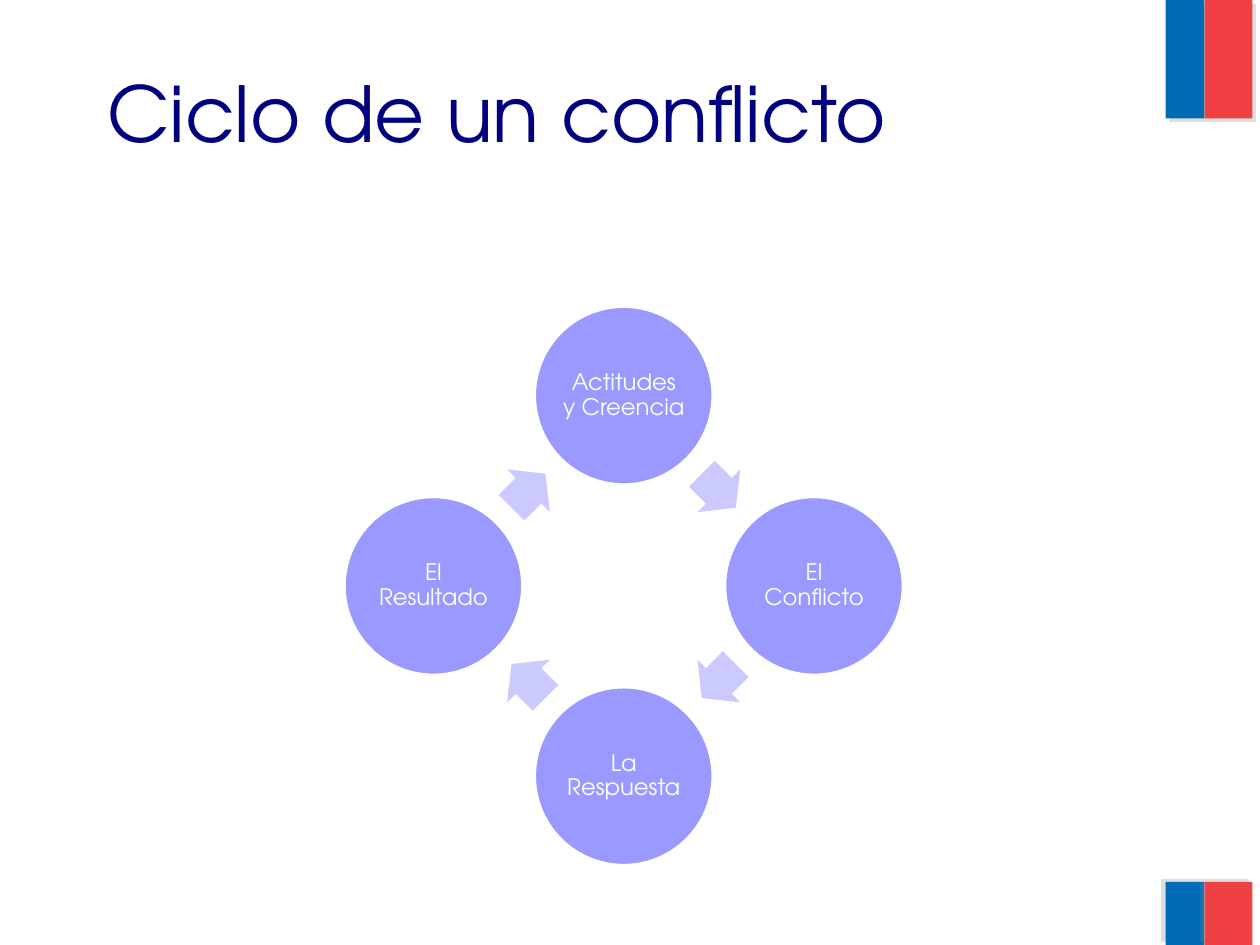
import math

from lxml import etree
from pptx import Presentation
from pptx.dml.color import RGBColor
from pptx.enum.shapes import MSO_SHAPE
from pptx.enum.text import MSO_ANCHOR, PP_ALIGN
from pptx.oxml.ns import qn
from pptx.util import Inches, Pt

RECT, OVAL, ARROW = MSO_SHAPE.RECTANGLE, MSO_SHAPE.OVAL, MSO_SHAPE.RIGHT_ARROW
TOP, MIDDLE = MSO_ANCHOR.TOP, MSO_ANCHOR.MIDDLE
LEFT, CENTER = PP_ALIGN.LEFT, PP_ALIGN.CENTER

NAVY = RGBColor(0x00, 0x00, 0x80)
BLUE = RGBColor(0x00, 0x6C, 0xB7)
RED = RGBColor(0xEF, 0x41, 0x44)
LILAC = RGBColor(0x99, 0x99, 0xFF)
PALE = RGBColor(0xCA, 0xCA, 0xFF)
WHITE = RGBColor(0xFF, 0xFF, 0xFF)


def write(frame, text, size=13, color=WHITE, font="TeX Gyre Adventor",
          align=LEFT, anchor=TOP, inset=None, space=None):
    frame.word_wrap = True
    frame.vertical_anchor = anchor
    if inset is not None:
        frame.margin_left = frame.margin_right = Inches(inset)
        frame.margin_top = frame.margin_bottom = Inches(inset)
    para = frame.paragraphs[0]
    para.alignment = align
    para.line_spacing = space
    run = para.add_run()
    run.text = text
    run.font.size = Pt(size)
    run.font.name = font
    run.font.color.rgb = color


class Deck:
    """Holds the style and the current slide."""
    disc = 1.42
    arrow = (0.38, 0.48)

    def __init__(self, slide):
        self.slide = slide

    def title(self, text):
        head = self.slide.shapes.title
        head.left, head.top = Inches(0.75), Inches(0.47)
        head.width, head.height = Inches(8.5), Inches(1.61)
        write(head.text_frame, text, size=44, color=NAVY)

    def shape(self, kind, x, y, w, h, fill):
        item = self.slide.shapes.add_shape(
            kind, Inches(x), Inches(y), Inches(w), Inches(h))
        item.shadow.inherit = False
        item.fill.solid()
        item.fill.fore_color.rgb = fill
        item.line.fill.background()
        return item

    def band(self, x, y, w, h, fill, angle):
        item = self.shape(RECT, x, y, w, h, fill)
        # Soft grey shadow, thrown at the given angle
        effects = item.element.spPr.find(qn("a:effectLst"))
        shade = etree.SubElement(effects, qn("a:outerShdw"), blurRad="0",
                                 dist=str(Pt(3)), dir=str(angle * 60000))
        color = etree.SubElement(shade, qn("a:srgbClr"), val="808080")
        etree.SubElement(color, qn("a:alpha"), val="25000")

    def stage(self, x, y, text):
        item = self.shape(OVAL, x - self.disc / 2, y - self.disc / 2,
                          self.disc, self.disc, LILAC)
        item.line.color.rgb = WHITE
        item.line.width = Pt(2)
        write(item.text_frame, text, align=CENTER, anchor=MIDDLE,
              inset=0.02, space=0.9)

    def step(self, x, y, turn):
        w, h = self.arrow
        item = self.shape(ARROW, x - w / 2, y - h / 2, w, h, PALE)
        item.adjustments[0], item.adjustments[1] = 0.6, 0.5
        item.rotation = turn


def main():
    prs = Presentation()
    prs.slide_width, prs.slide_height = Inches(10), Inches(7.5)
    deck = Deck(prs.slides.add_slide(prs.slide_layouts[5]))

    # Corner bands
    for y, h, angle in ((0, 0.94, 45), (7, 0.5, 215)):
        deck.band(9.25, y, 0.31, h, BLUE, angle)
        deck.band(9.56, y, 0.38, h, RED, angle)

    deck.title("Ciclo de un conflicto")

    # Cycle: clockwise from the top, an arrow midway to the next stage
    stages = ("Actitudes y Creencia", "El Conflicto",
              "La Respuesta", "El Resultado")
    mid_x, mid_y, radius = 4.95, 4.65, 1.51
    turn = 360 / len(stages)
    reach = radius * math.cos(math.radians(turn / 2))

    def place(angle, dist):
        rad = math.radians(angle)
        return mid_x + dist * math.sin(rad), mid_y - dist * math.cos(rad)

    for i, text in enumerate(stages):
        half = (i + 0.5) * turn
        deck.stage(*place(i * turn, radius), text)
        deck.step(*place(half, reach), half)

    prs.save("out.pptx")


if __name__ == "__main__":
    main()
